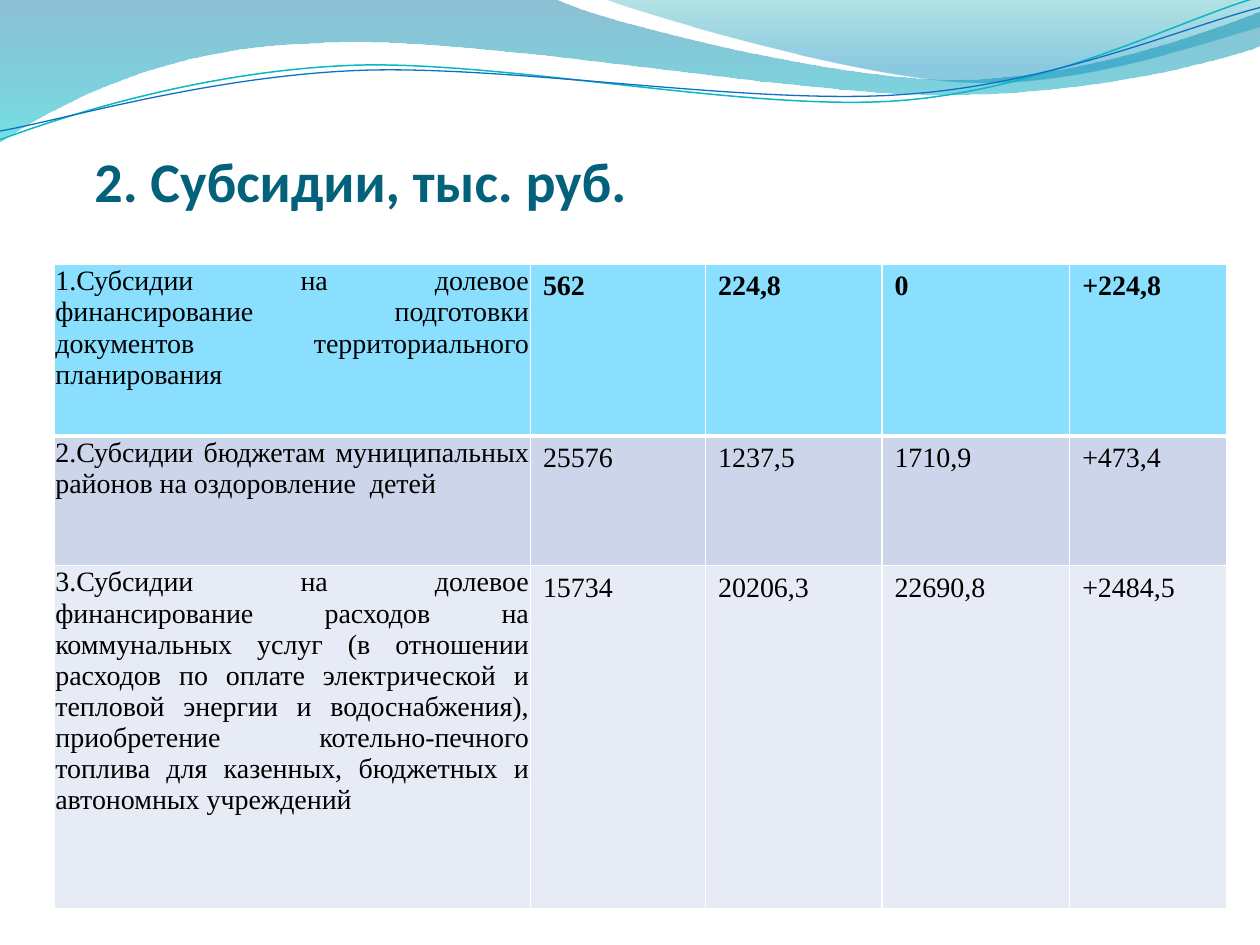
import dataclasses
import typing

import pptx
import pptx.dml.color
import pptx.enum.text
import pptx.oxml
import pptx.oxml.ns
import pptx.util

Inches = pptx.util.Inches
Pt = pptx.util.Pt
NAMESPACE = pptx.oxml.ns.nsdecls("a")
Point = tuple[float, float]
# Two numbers make a straight segment, six make a Bézier curve.
Segment = tuple[float, ...]


class Stop(typing.NamedTuple):
    position: float
    color: str
    opacity: int


@dataclasses.dataclass
class Wave:
    start: Point
    segments: list[Segment]
    stops: tuple[Stop, ...] = ()
    line_color: str = ""
    line_width: float = 0


class Row(typing.NamedTuple):
    height: float
    fill: str
    bold: bool
    texts: tuple[str, ...]


WAVES = [
    Wave((0, 0), [
        (4.4, -0.01), (4.76, 0.17, 6.64, 0.63, 7.58, 0.63),
        (8.53, 0.63, 9.58, 0.26, 10, 0.09), (10.01, 0.36),
        (9.83, 0.44, 8.7, 0.76, 7.46, 0.75),
        (6.22, 0.75, 3.82, 0.28, 2.57, 0.34),
        (1.29, 0.36, 0.46, 0.83, -0.01, 1.13),
    ], stops=(Stop(0, "0074A1", 45), Stop(1, "00C6CF", 55))),
    Wave((4.79, -0.01), [
        (5.09, 0.11, 6.82, 0.62, 7.69, 0.65),
        (8.56, 0.69, 9.61, 0.32, 10, 0.21), (10, 0),
    ], stops=(Stop(0, "00A1A9", 30), Stop(0.8, "008BBF", 45))),
    Wave((0, 1.11), [
        (0.48, 0.93, 1.58, 0.57, 2.77, 0.52),
        (3.95, 0.47, 5.93, 0.89, 7.13, 0.8),
        (8.33, 0.71, 9.38, 0.15, 9.98, -0.02),
    ], line_color="0AB8BF", line_width=0.85),
    Wave((0, 1.04), [
        (0.47, 0.96, 1.64, 0.61, 2.83, 0.56),
        (4.03, 0.51, 5.97, 0.84, 7.17, 0.75),
        (8.36, 0.67, 9.41, 0.21, 10, 0.06),
    ], line_color="0F6FC6", line_width=0.75),
]

COLUMN_WIDTHS = (3.78, 1.39, 1.4, 1.49, 1.25)
ROWS = [
    Row(1.36, "8ADFFF", True, (
        "1.Субсидии на долевое финансирование подготовки документов "
        "территориального планирования",
        "562", "224,8", "0", "+224,8")),
    Row(1.03, "CCD5EA", False, (
        "2.Субсидии бюджетам муниципальных районов на оздоровление  детей",
        "25576", "1237,5", "1710,9", "+473,4")),
    Row(2.72, "E7EBF5", False, (
        "3.Субсидии на долевое финансирование расходов на коммунальных услуг "
        "(в отношении расходов по оплате электрической и тепловой энергии и "
        "водоснабжения), приобретение котельно-печного топлива для казенных, "
        "бюджетных и автономных учреждений",
        "15734", "20206,3", "22690,8", "+2484,5")),
]


def rgb(color: str) -> pptx.dml.color.RGBColor:
    return pptx.dml.color.RGBColor.from_string(color)


def style_font(paragraph, name: str, size: float, color: str, bold: bool) -> None:
    paragraph.font.name = name
    paragraph.font.size = Pt(size)
    paragraph.font.bold = bold
    paragraph.font.color.rgb = rgb(color)


def bend_segments(shape, segments: list[Segment]) -> None:
    """Replace the straight segments that have control points by curves."""
    lines = list(shape.element.spPr.iter(pptx.oxml.ns.qn("a:lnTo")))
    for line, segment in zip(lines, segments):
        if len(segment) == 2:
            continue
        points = "".join(
            f'<a:pt x="{Inches(x) - shape.left}" y="{Inches(y) - shape.top}"/>'
            for x, y in zip(segment[::2], segment[1::2]))
        line.getparent().replace(line, pptx.oxml.parse_xml(
            f"<a:cubicBezTo {NAMESPACE}>{points}</a:cubicBezTo>"))


def draw_wave(slide, wave: Wave) -> None:
    x, y = wave.start
    builder = slide.shapes.build_freeform(Inches(x), Inches(y))
    builder.add_line_segments(
        [(Inches(segment[-2]), Inches(segment[-1])) for segment in wave.segments],
        close=bool(wave.stops))
    shape = builder.convert_to_shape()
    bend_segments(shape, wave.segments)
    shape.shadow.inherit = False
    if not wave.stops:
        shape.fill.background()
        shape.line.color.rgb = rgb(wave.line_color)
        shape.line.width = Pt(wave.line_width)
        return
    shape.line.fill.background()
    shape.fill.gradient()
    shape.fill.gradient_angle = 270
    for gradient_stop, stop in zip(shape.fill.gradient_stops, wave.stops):
        gradient_stop.position = stop.position
        gradient_stop.color.rgb = rgb(stop.color)
    # Opacity of each gradient stop
    colors = shape.element.spPr.iter(pptx.oxml.ns.qn("a:srgbClr"))
    for color, stop in zip(colors, wave.stops):
        color.append(pptx.oxml.parse_xml(
            f'<a:alpha {NAMESPACE} val="{stop.opacity * 1000}"/>'))


def set_borders(cell, widths: dict[str, float]) -> None:
    properties = cell._tc.get_or_add_tcPr()
    for index, (side, width) in enumerate(widths.items()):
        properties.insert(index, pptx.oxml.parse_xml(
            f'<a:ln{side} {NAMESPACE} w="{Pt(width)}">'
            f'<a:solidFill><a:srgbClr val="FFFFFF"/></a:solidFill></a:ln{side}>'))


def draw_table(slide, left: float, top: float) -> None:
    table = slide.shapes.add_table(
        len(ROWS), len(COLUMN_WIDTHS), Inches(left), Inches(top),
        Inches(sum(COLUMN_WIDTHS)), Inches(sum(row.height for row in ROWS))).table
    table.first_row = table.horz_banding = False
    for column, width in zip(table.columns, COLUMN_WIDTHS):
        column.width = Inches(width)
    for row_index, row in enumerate(ROWS):
        table.rows[row_index].height = Inches(row.height)
        for column_index, text in enumerate(row.texts):
            cell = table.cell(row_index, column_index)
            cell.text = text
            cell.fill.solid()
            cell.fill.fore_color.rgb = rgb(row.fill)
            is_label = column_index == 0
            paragraph = cell.text_frame.paragraphs[0]
            style_font(paragraph, "Times New Roman", 16, "000000",
                       row.bold and not is_label)
            if is_label:
                paragraph.alignment = pptx.enum.text.PP_ALIGN.JUSTIFY
                cell.margin_left = cell.margin_right = cell.margin_top = Inches(0.01)
                cell.margin_bottom = 0
            # A thick rule separates the first row from the others
            set_borders(cell, {"L": 1, "R": 1, "T": 3 if row_index == 1 else 1,
                               "B": 3 if row_index == 0 else 1})


def draw_title(slide, text: str) -> None:
    frame = slide.shapes.add_textbox(
        Inches(0.75), Inches(1.07), Inches(9), Inches(0.63)).text_frame
    frame.word_wrap = True
    frame.vertical_anchor = pptx.enum.text.MSO_ANCHOR.BOTTOM
    frame.margin_left = frame.margin_right = frame.margin_bottom = 0
    frame.margin_top = Inches(0.05)
    frame.text = text
    style_font(frame.paragraphs[0], "Calibri", 32, "04617B", True)


def main() -> None:
    presentation = pptx.Presentation()
    presentation.slide_width = Inches(10)
    presentation.slide_height = Inches(7.5)
    slide = presentation.slides.add_slide(presentation.slide_layouts[6])
    # Decorative header
    for wave in WAVES:
        draw_wave(slide, wave)
    # Title and table
    draw_title(slide, "2. Субсидии, тыс. руб.")
    draw_table(slide, 0.43, 2.1)
    presentation.save("out.pptx")


if __name__ == "__main__":
    main()
